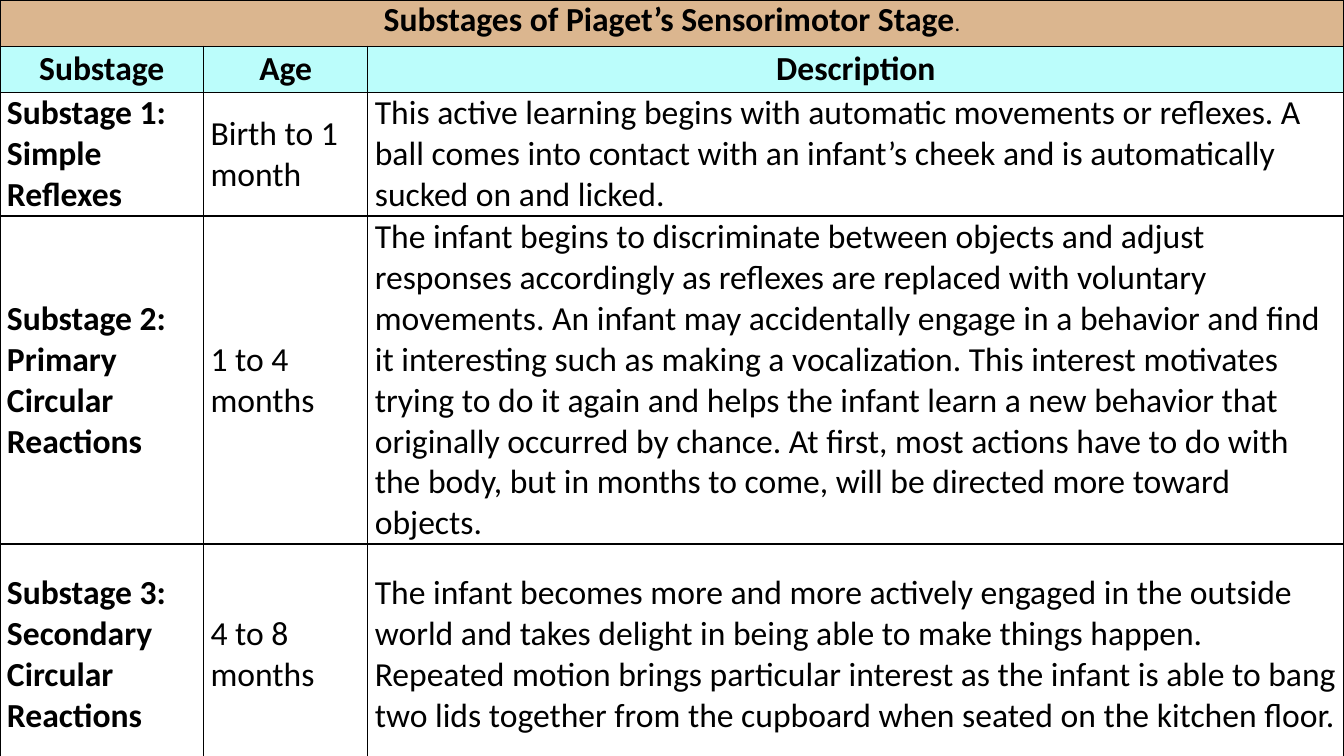
from lxml import etree
from pptx import Presentation
from pptx import util as u
from pptx.dml.color import RGBColor
from pptx.enum import text
from pptx.oxml import ns

BLACK = RGBColor(0x00, 0x00, 0x00)
TAN = RGBColor(0xDB, 0xB6, 0x8F)
AQUA = RGBColor(0xBB, 0xFD, 0xFB)

COLUMN_WIDTHS = (145.44, 117.36, 697.2)
ROW_HEIGHTS = (33.1, 32.9, 88.4, 228.2, 157.8)
TITLE = "Substages of Piaget’s Sensorimotor Stage"
HEADINGS = ("Substage", "Age", "Description")
SUBSTAGES = (
    ("Substage 1: Simple Reflexes", "Birth to 1 month",
     "This active learning begins with automatic movements or reflexes. "
     "A ball comes into contact with an infant’s cheek and is automatically "
     "sucked on and licked."),
    ("Substage 2: Primary Circular Reactions", "1 to 4 months",
     "The infant begins to discriminate between objects and adjust responses "
     "accordingly as reflexes are replaced with voluntary movements. An infant "
     "may accidentally engage in a behavior and find it interesting such as "
     "making a vocalization. This interest motivates trying to do it again and "
     "helps the infant learn a new behavior that originally occurred by chance. "
     "At first, most actions have to do with the body, but in months to come, "
     "will be directed more toward objects."),
    ("Substage 3: Secondary Circular Reactions", "4 to 8 months",
     "The infant becomes more and more actively engaged in the outside world "
     "and takes delight in being able to make things happen. Repeated motion "
     "brings particular interest as the infant is able to bang two lids together "
     "from the cupboard when seated on the kitchen floor."),
)


class SlideBuilder:
    cell_format = {
        "margin_left": u.Pt(5), "margin_right": u.Pt(5),
        "margin_top": 0, "margin_bottom": 0,
        "vertical_anchor": text.MSO_ANCHOR.MIDDLE,
    }
    heading_format = {"alignment": text.PP_ALIGN.CENTER, "space_after": u.Pt(8)}
    label_format = {"alignment": text.PP_ALIGN.LEFT, "space_after": u.Pt(8)}
    body_format = {"alignment": text.PP_ALIGN.LEFT}

    def __init__(self, slide):
        self.slide = slide

    def apply(self, target, settings):
        for key, value in settings.items():
            setattr(target, key, value)

    def table(self, widths, heights):
        frame = self.slide.shapes.add_table(
            len(heights), len(widths), 0, 0, u.Pt(sum(widths)), u.Pt(sum(heights)))
        table = frame.table
        self.apply(table, {"first_row": False, "horz_banding": False})
        for column, width in zip(table.columns, widths):
            column.width = u.Pt(width)
        for row, height in zip(table.rows, heights):
            row.height = u.Pt(height)
        for cell in table.iter_cells():
            self.apply(cell, self.cell_format)
            self.borders(cell)
            cell.fill.background()
        return table

    def borders(self, cell):
        properties = cell._tc.get_or_add_tcPr()
        for side in ("a:lnL", "a:lnR", "a:lnT", "a:lnB"):
            line = etree.SubElement(properties, ns.qn(side), w=str(u.Pt(1)))
            fill = etree.SubElement(line, ns.qn("a:solidFill"))
            etree.SubElement(fill, ns.qn("a:srgbClr"), val=str(BLACK))

    def add_words(self, paragraph, words, bold=False, size=24):
        run = paragraph.add_run()
        run.text = words
        self.apply(run.font, {"name": "Calibri", "size": u.Pt(size), "bold": bold})
        run.font.color.rgb = BLACK

    def fill_cell(self, cell, words, paragraph_format, bold=False, color=None):
        paragraph = cell.text_frame.paragraphs[0]
        self.apply(paragraph, paragraph_format)
        self.add_words(paragraph, words, bold)
        if color is not None:
            cell.fill.solid()
            cell.fill.fore_color.rgb = color
        return paragraph


def main():
    deck = Presentation()
    deck.slide_width, deck.slide_height = u.Pt(960), u.Pt(540)
    builder = SlideBuilder(deck.slides.add_slide(deck.slide_layouts[6]))
    stages = builder.table(COLUMN_WIDTHS, ROW_HEIGHTS)

    title_cell = stages.cell(0, 0)
    title_cell.merge(stages.cell(0, 2))
    title_cell.vertical_anchor = text.MSO_ANCHOR.TOP
    title = builder.fill_cell(title_cell, TITLE, builder.heading_format, True, TAN)
    builder.add_words(title, ".", size=16)

    for column, heading in enumerate(HEADINGS):
        builder.fill_cell(stages.cell(1, column), heading, builder.heading_format, True, AQUA)
    for row, (substage, age, description) in enumerate(SUBSTAGES, 2):
        builder.fill_cell(stages.cell(row, 0), substage, builder.label_format, True)
        builder.fill_cell(stages.cell(row, 1), age, builder.body_format)
        builder.fill_cell(stages.cell(row, 2), description, builder.body_format)

    deck.save("out.pptx")


if __name__ == "__main__":
    main()
